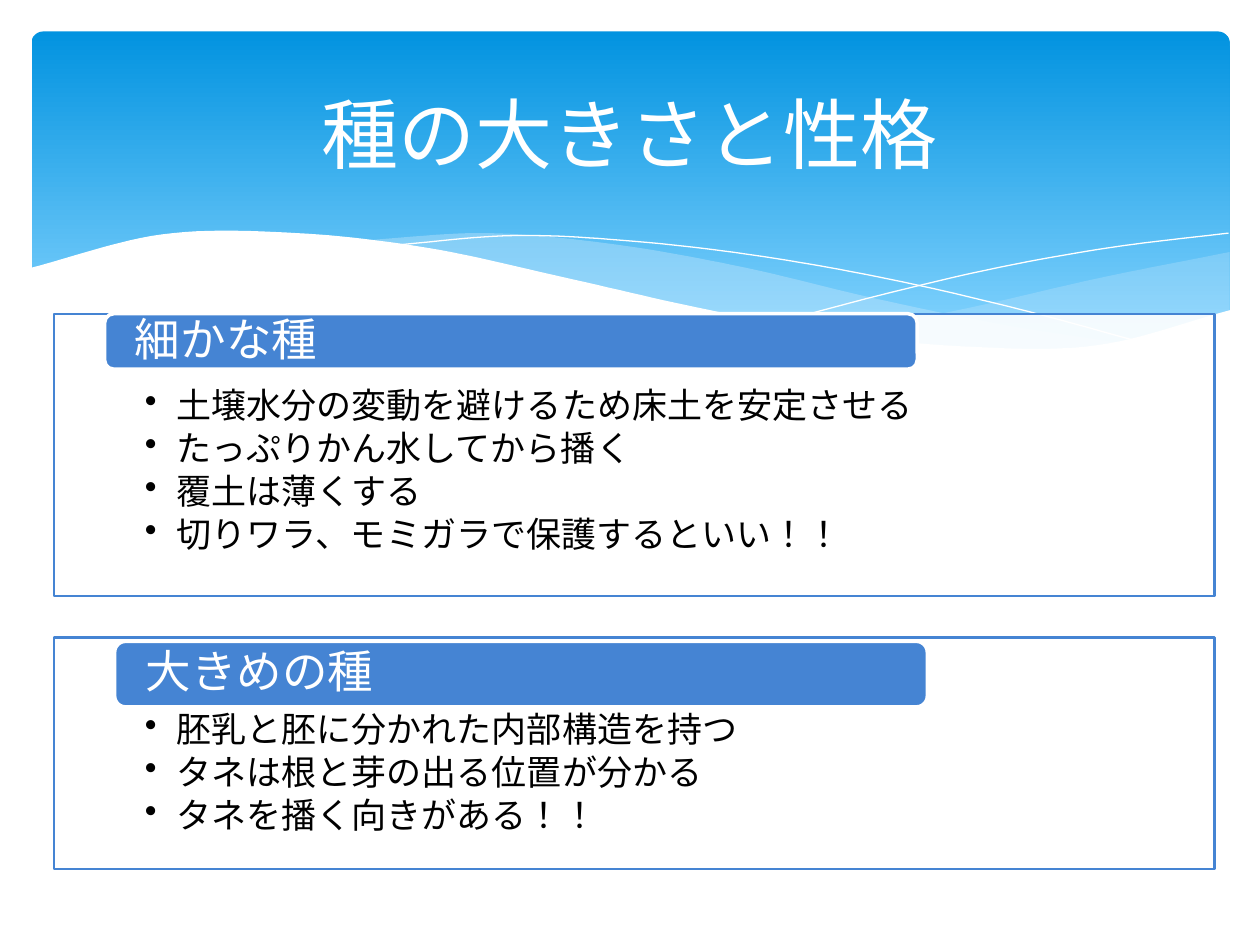
"""Build the slide on seed size: a wave banner, a title and two labelled panels."""
from lxml import etree
from pptx import Presentation
from pptx.dml.color import RGBColor
from pptx.enum.lang import MSO_LANGUAGE_ID
from pptx.enum.shapes import MSO_SHAPE
from pptx.enum.text import MSO_ANCHOR, PP_ALIGN
from pptx.oxml.ns import qn
from pptx.util import Inches, Pt

RECT, ROUNDED = MSO_SHAPE.RECTANGLE, MSO_SHAPE.ROUNDED_RECTANGLE
TOP, MIDDLE = MSO_ANCHOR.TOP, MSO_ANCHOR.MIDDLE
LEFT, CENTER = PP_ALIGN.LEFT, PP_ALIGN.CENTER
JAPANESE = MSO_LANGUAGE_ID.JAPANESE
FONT = "Calibri"
COLORS = {"white": "FFFFFF", "black": "000000", "blue": "4584D3",
          "sky_top": "0293E0", "sky_bottom": "83D3FE", "mist": "C6E7FC"}

TITLE = "種の大きさと性格"
PANELS = [
    {"heading": "大きめの種", "top": 5.06, "height": 1.84,
     "label": (0.91, 5.09, 6.45, 0.52),
     "points": ["胚乳と胚に分かれた内部構造を持つ",
                "タネは根と芽の出る位置が分かる",
                "タネを播く向きがある！！"]},
    {"heading": "細かな種", "top": 2.49, "height": 2.24,
     "label": (0.83, 2.49, 6.45, 0.44),
     "points": ["土壌水分の変動を避けるため床土を安定させる",
                "たっぷりかん水してから播く",
                "覆土は薄くする",
                "切りワラ、モミガラで保護するといい！！"]},
]
PANEL_LEFT, PANEL_WIDTH = 0.43, 9.21

RIGHT_SWELL = {"span": (6.61, 9.76), "fill": "mist", "opacity": 29,
               "upper": [2.65, 2.45, 2.21, 2.0],
               "lower": [2.65, 2.77, 2.74, 2.47]}
MIDDLE_SWELL = {"span": (2.86, 8.93), "fill": "mist", "opacity": 40,
                "upper": [1.91, 1.85, 1.94, 2.12, 2.36, 2.57, 2.73],
                "lower": [1.91, 2.08, 2.31, 2.53, 2.69, 2.78, 2.73]}
FALLING_THREAD = {"span": (3.09, 9.07),
                  "upper": [1.95, 1.87, 1.92, 2.04, 2.22, 2.45, 2.72]}
RISING_THREAD = {"span": (6.13, 9.75), "upper": [2.57, 2.33, 2.12, 1.96, 1.85]}
WHITE_WAVE = {"span": (0.23, 9.77), "fill": "white",
              "upper": [2.13, 1.86, 1.85, 1.97, 2.2, 2.44, 2.64, 2.75, 2.74, 2.46],
              "lower": [3.29, 3.29]}
WAVES = [RIGHT_SWELL, MIDDLE_SWELL, FALLING_THREAD, RISING_THREAD, WHITE_WAVE]
STEPS_PER_HEIGHT = 12
UNITS_PER_INCH = 1000


def color(name):
    return RGBColor.from_string(COLORS[name])


def paint(shape, fill=None, line=None, width=0, opacity=100):
    shape.shadow.inherit = False
    if fill:
        shape.fill.solid()
        shape.fill.fore_color.rgb = color(fill)
        if opacity < 100:
            tint = shape._element.spPr.find(qn("a:solidFill")).find(qn("a:srgbClr"))
            etree.SubElement(tint, qn("a:alpha"), val=str(opacity * 1000))
    else:
        shape.fill.background()
    if line:
        shape.line.color.rgb = color(line)
        shape.line.width = Pt(width)
    else:
        shape.line.fill.background()


def add_box(slide, kind, box):
    return slide.shapes.add_shape(kind, *map(Inches, box))


def add_banner(slide):
    banner = add_box(slide, ROUNDED, (0.25, 0.25, 9.51, 2.7))
    banner.adjustments[0] = 0.034
    paint(banner)
    banner.fill.gradient()
    banner.fill.gradient_angle = 270
    stops = [(0, "sky_top"), (0.9, "sky_bottom")]
    for stop, (position, name) in zip(banner.fill.gradient_stops, stops):
        stop.position = position
        stop.color.rgb = color(name)


def spline(before, start, end, after, t):
    """Catmull-Rom height at share t of the way from start to end."""
    return start + t / 2 * (end - before
                            + t * (2 * before - 5 * start + 4 * end - after)
                            + t * t * (3 * (start - end) + after - before))


def curve(span, heights):
    """Smooth line through heights spaced evenly across the span."""
    left, right = span
    gap = (right - left) / (len(heights) - 1)
    padded = [2 * heights[0] - heights[1], *heights, 2 * heights[-1] - heights[-2]]
    points = []
    for index in range(len(heights) - 1):
        for step in range(STEPS_PER_HEIGHT):
            t = step / STEPS_PER_HEIGHT
            points.append((left + (index + t) * gap, spline(*padded[index:index + 4], t)))
    return points + [(right, heights[-1])]


def add_wave(slide, span, upper, lower=None, fill=None, opacity=100):
    outline = curve(span, upper)
    if lower:
        outline += reversed(curve(span, lower))
    start, *rest = [(round(x * UNITS_PER_INCH), round(y * UNITS_PER_INCH)) for x, y in outline]
    builder = slide.shapes.build_freeform(*start, scale=Inches(1) / UNITS_PER_INCH)
    builder.add_line_segments(rest, close=bool(lower))
    paint(builder.convert_to_shape(), fill, None if fill else "white", opacity=opacity)


def write(shape, lines, size, ink, anchor, insets, align=LEFT, after=0, spacing=0.9, bullets=False):
    frame = shape.text_frame
    frame.word_wrap = True
    frame.vertical_anchor = anchor
    (frame.margin_left, frame.margin_top,
     frame.margin_right, frame.margin_bottom) = map(Inches, insets)
    frame.text = "\n".join(lines)
    for paragraph in frame.paragraphs:
        paragraph.alignment = align
        paragraph.line_spacing = spacing
        paragraph.space_after = Pt(after)
        paragraph.font.name = FONT
        paragraph.font.size = Pt(size)
        paragraph.font.color.rgb = color(ink)
        paragraph.font.language_id = JAPANESE
        if bullets:
            add_bullet(paragraph)


def add_bullet(paragraph):
    properties = paragraph._p.get_or_add_pPr()
    properties.set("marL", str(Inches(0.25)))
    properties.set("indent", str(-Inches(0.25)))
    bullet = etree.Element(qn("a:buChar"), char="•")
    properties.find(qn("a:defRPr")).addprevious(bullet)


def add_panel(slide, heading, top, height, label, points):
    panel = add_box(slide, RECT, (PANEL_LEFT, top, PANEL_WIDTH, height))
    paint(panel, "white", "blue", 1.25, opacity=90)
    write(panel, points, 20, "black", TOP, (0.72, 0.59, 0.72, 0.16), after=3, bullets=True)
    tab = add_box(slide, ROUNDED, label)
    paint(tab, "blue", "white", 2)
    write(tab, [heading], 26, "white", MIDDLE, (0.22, 0, 0.22, 0))


def add_title(slide):
    title = slide.shapes.title
    title.left, title.top, title.width, title.height = map(Inches, (0.5, 0.37, 9, 1.37))
    write(title, [TITLE], 44, "white", MIDDLE, (0.1, 0.05, 0.1, 0.05), CENTER, spacing=1.0)
    slide.shapes._spTree.append(title._element)


def main():
    deck = Presentation()
    deck.slide_width, deck.slide_height = Inches(10), Inches(7.5)
    slide = deck.slides.add_slide(deck.slide_layouts[5])
    add_banner(slide)
    for wave in WAVES:
        add_wave(slide, **wave)
    for panel in PANELS:
        add_panel(slide, **panel)
    add_title(slide)
    deck.save("out.pptx")


if __name__ == "__main__":
    main()
